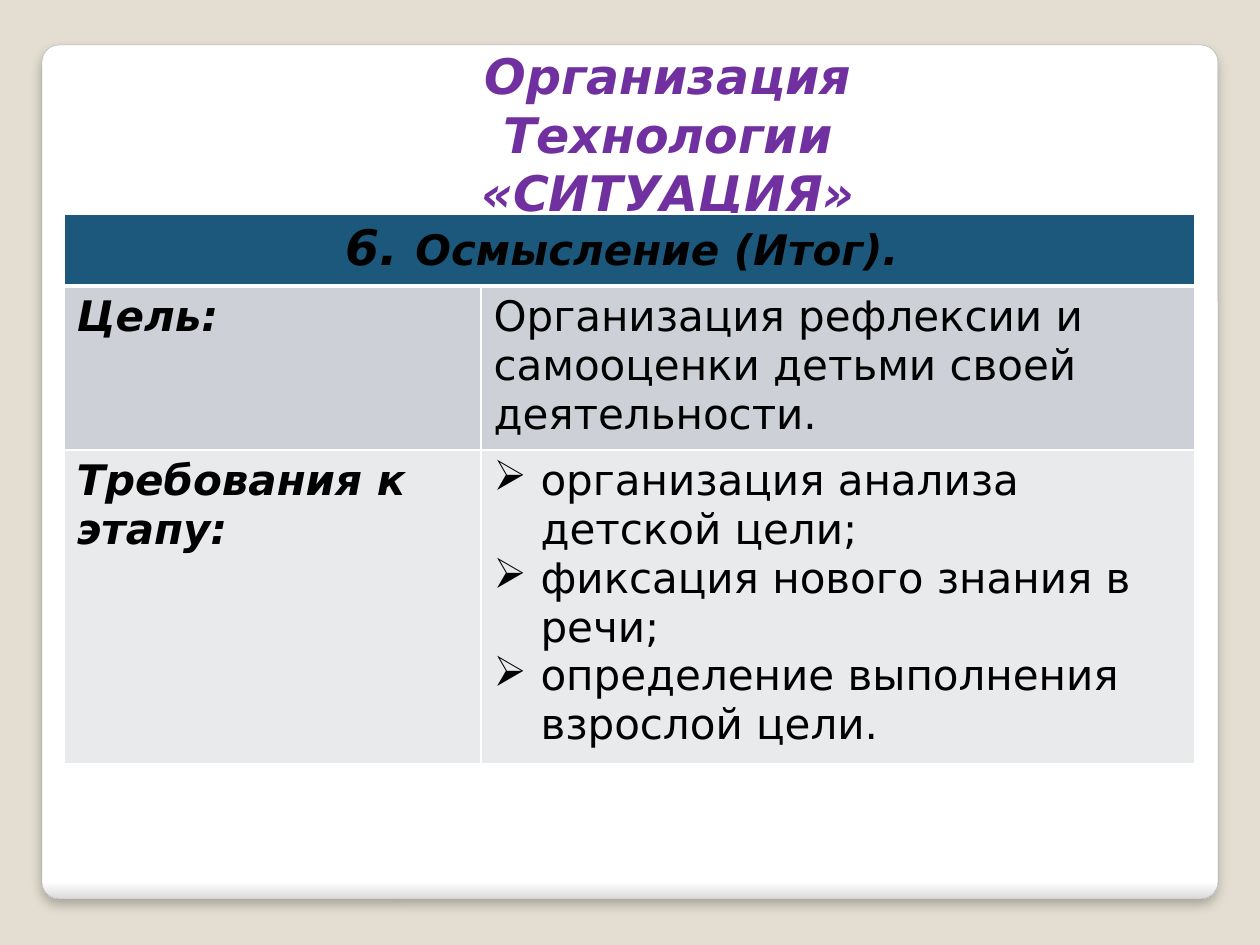
from lxml import etree
from pptx import Presentation
from pptx import util as u
from pptx.dml.color import RGBColor
from pptx.enum import shapes, text
from pptx.oxml.ns import qn

PX = 914400 // 126
FONT = "DejaVu Sans"
SAND = RGBColor(0xE3, 0xDE, 0xD1)
WHITE = RGBColor(0xFF, 0xFF, 0xFF)
EDGE = RGBColor(0xDA, 0xDA, 0xDA)
OUTLINE = RGBColor(0xA4, 0xA4, 0xA4)
PURPLE = RGBColor(0x70, 0x30, 0xA0)
BLACK = RGBColor(0, 0, 0)
HEADER = RGBColor(0x1B, 0x58, 0x7C)
BAND_DARK = RGBColor(0xCD, 0xD1, 0xD7)
BAND_LIGHT = RGBColor(0xE8, 0xEA, 0xEC)


def add_run(p, words, size, color=BLACK, strong=True):
    r = p.add_run()
    r.text = words
    r.font.name, r.font.size = FONT, u.Pt(size)
    r.font.bold = r.font.italic = strong
    r.font.color.rgb = color


def style_cell(cell, fill, bottom=1):
    tc_pr = cell._tc.get_or_add_tcPr()
    for side, width in (("L", 1), ("R", 1), ("T", 1), ("B", bottom)):
        ln = etree.SubElement(tc_pr, qn(f"a:ln{side}"), w=str(u.Pt(width)))
        solid = etree.SubElement(ln, qn("a:solidFill"))
        etree.SubElement(solid, qn("a:srgbClr"), val=str(WHITE))
    cell.fill.solid()
    cell.fill.fore_color.rgb = fill


prs = Presentation()
prs.slide_width, prs.slide_height = u.Inches(10), u.Inches(7.5)
s = prs.slides.add_slide(prs.slide_layouts[5])
s.background.fill.solid()
s.background.fill.fore_color.rgb = SAND

# White card with a soft lower edge and shadow, behind everything
card = s.shapes.add_shape(shapes.MSO_SHAPE.ROUNDED_RECTANGLE,
                          42 * PX, 45 * PX, 1176 * PX, 854 * PX)
card.adjustments[0] = 0.02
card.fill.gradient()
card.fill.gradient_angle = 270
for stop, color, position in zip(card.fill.gradient_stops, (WHITE, EDGE), (0.98, 1)):
    stop.color.rgb, stop.position = color, position
card.line.color.rgb = OUTLINE
card.line.width = u.Pt(0.16)
card.shadow.inherit = False
effects = card._element.spPr.find(qn("a:effectLst"))
shadow = etree.SubElement(effects, qn("a:outerShdw"), blurRad=str(u.Pt(6)),
                          dist=str(u.Pt(4)), dir="5400000", rotWithShape="0")
shadow_color = etree.SubElement(shadow, qn("a:srgbClr"), val=str(BLACK))
etree.SubElement(shadow_color, qn("a:alpha"), val="25000")
s.shapes._spTree.insert(2, card._element)

# Title
title = s.shapes.title
title.left, title.top, title.width, title.height = 386 * PX, 39 * PX, 564 * PX, 131 * PX
tf = title.text_frame
tf.word_wrap = True
tf.auto_size = text.MSO_AUTO_SIZE.NONE
tf.vertical_anchor = text.MSO_ANCHOR.TOP
for i, line in enumerate(("Организация", "Технологии «СИТУАЦИЯ»")):
    p = tf.add_paragraph() if i else tf.paragraphs[0]
    p.alignment = text.PP_ALIGN.CENTER
    add_run(p, line, 28, PURPLE)

# Table grid
table = s.shapes.add_table(3, 2, 64 * PX, 214 * PX, 1131 * PX, 550 * PX).table
for column, width in zip(table.columns, (417, 714)):
    column.width = width * PX
for row, height in zip(table.rows, (72, 164, 314)):
    row.height = height * PX

# Merged heading row
heading = table.cell(0, 0)
heading.merge(table.cell(0, 1))
style_cell(heading, HEADER, bottom=3)
p = heading.text_frame.paragraphs[0]
p.alignment = text.PP_ALIGN.CENTER
add_run(p, "6. ", 28)
add_run(p, "Осмысление (Итог). ", 24)

# Body rows: label, then one paragraph or a bulleted list
body = [
    ("Цель:", ["Организация рефлексии и самооценки детьми своей деятельности."], BAND_DARK),
    ("Требования к этапу:", ["организация анализа детской цели;",
                             "фиксация нового знания в речи;",
                             "определение выполнения взрослой цели."], BAND_LIGHT),
]
for row, (label, lines, fill) in enumerate(body, 1):
    label_cell, text_cell = table.cell(row, 0), table.cell(row, 1)
    style_cell(label_cell, fill)
    style_cell(text_cell, fill)
    add_run(label_cell.text_frame.paragraphs[0], label, 24)
    tf = text_cell.text_frame
    for i, line in enumerate(lines):
        p = tf.add_paragraph() if i else tf.paragraphs[0]
        add_run(p, line, 24, strong=False)
        if len(lines) > 1:
            p_pr = p._p.get_or_add_pPr()
            p_pr.set("marL", str(47 * PX))
            p_pr.set("indent", str(-47 * PX))
            etree.SubElement(p_pr, qn("a:buChar"), char="➢")

prs.save("out.pptx")
